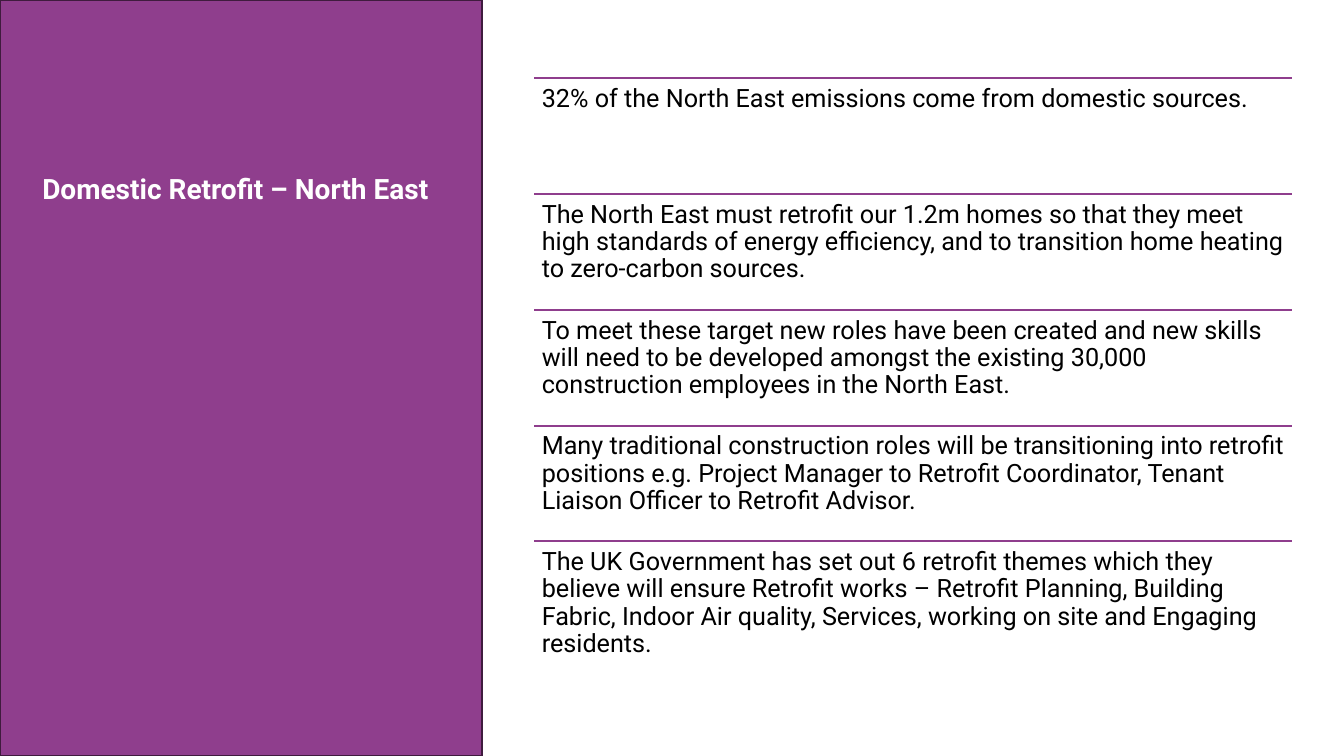
from lxml import etree
from pptx import Presentation
from pptx.dml.color import RGBColor
from pptx.enum import shapes, text
from pptx.oxml import ns
from pptx.util import Pt

HEAD = "Domestic Retrofit – North East"
POINTS = [
    "32% of the North East emissions come from domestic sources.",
    "The North East must retrofit our 1.2m homes so that they meet high standards of energy efficiency, and to transition home heating to zero-carbon sources.",
    "To meet these target new roles have been created and new skills will need to be developed amongst the existing 30,000 construction employees in the North East.",
    "Many traditional construction roles will be transitioning into retrofit positions e.g. Project Manager to Retrofit Coordinator, Tenant Liaison Officer to Retrofit Advisor.",
    "The UK Government has set out 6 retrofit themes which they believe will ensure Retrofit works – Retrofit Planning, Building Fabric, Indoor Air quality, Services, working on site and Engaging residents.",
]

PURPLE = RGBColor(0x8F, 0x3E, 0x8D)
DARK = RGBColor(0x3F, 0x1B, 0x3E)
WHITE = RGBColor(0xFF, 0xFF, 0xFF)
BLACK = RGBColor(0, 0, 0)
FONT = "Roboto"

WIDE, HIGH = 960, 540
PANEL = 344.2
LEFT, TOP, WIDTH, STEP = 381.6, 55.9, 541.4, 82.7
INSET = 5.4


def write(frame, words, size, color, bold=False):
    frame.word_wrap = True
    frame.auto_size = text.MSO_AUTO_SIZE.NONE
    para = frame.paragraphs[0]
    para.alignment = text.PP_ALIGN.LEFT
    para.line_spacing = 0.9
    run = para.add_run()
    run.text = words
    run.font.name = FONT
    run.font.size = Pt(size)
    run.font.bold = bold
    run.font.color.rgb = color


def add_rule(slide, top):
    rule = slide.shapes.add_connector(
        shapes.MSO_CONNECTOR.STRAIGHT, Pt(LEFT), Pt(top), Pt(LEFT + WIDTH), Pt(top))
    rule.line.color.rgb = PURPLE
    rule.line.width = Pt(1.5)
    etree.SubElement(rule._element.spPr, ns.qn("a:effectLst"))


def add_point(slide, top, words):
    box = slide.shapes.add_textbox(Pt(LEFT), Pt(top), Pt(WIDTH), Pt(STEP))
    frame = box.text_frame
    frame.margin_left = frame.margin_right = Pt(INSET)
    frame.margin_top = frame.margin_bottom = Pt(INSET)
    frame.vertical_anchor = text.MSO_ANCHOR.TOP
    write(frame, words, 18, BLACK)


def main():
    deck = Presentation()
    deck.slide_width, deck.slide_height = Pt(WIDE), Pt(HIGH)
    slide = deck.slides.add_slide(deck.slide_layouts[5])

    panel = slide.shapes.add_shape(
        shapes.MSO_SHAPE.RECTANGLE, Pt(0), Pt(0), Pt(PANEL), Pt(HIGH))
    panel.shadow.inherit = False
    panel.fill.solid()
    panel.fill.fore_color.rgb = PURPLE
    panel.line.color.rgb = DARK
    panel.line.width = Pt(1.5)

    title = slide.shapes.title
    title._element.addprevious(panel._element)
    title.left, title.top = Pt(23), Pt(110.2)
    title.width, title.height = Pt(296), Pt(51.8)
    title.text_frame.vertical_anchor = text.MSO_ANCHOR.MIDDLE
    write(title.text_frame, HEAD, 20, WHITE, True)

    for row, words in enumerate(POINTS):
        top = TOP + row * STEP
        add_rule(slide, top)
        add_point(slide, top, words)

    deck.save("out.pptx")


if __name__ == "__main__":
    main()
